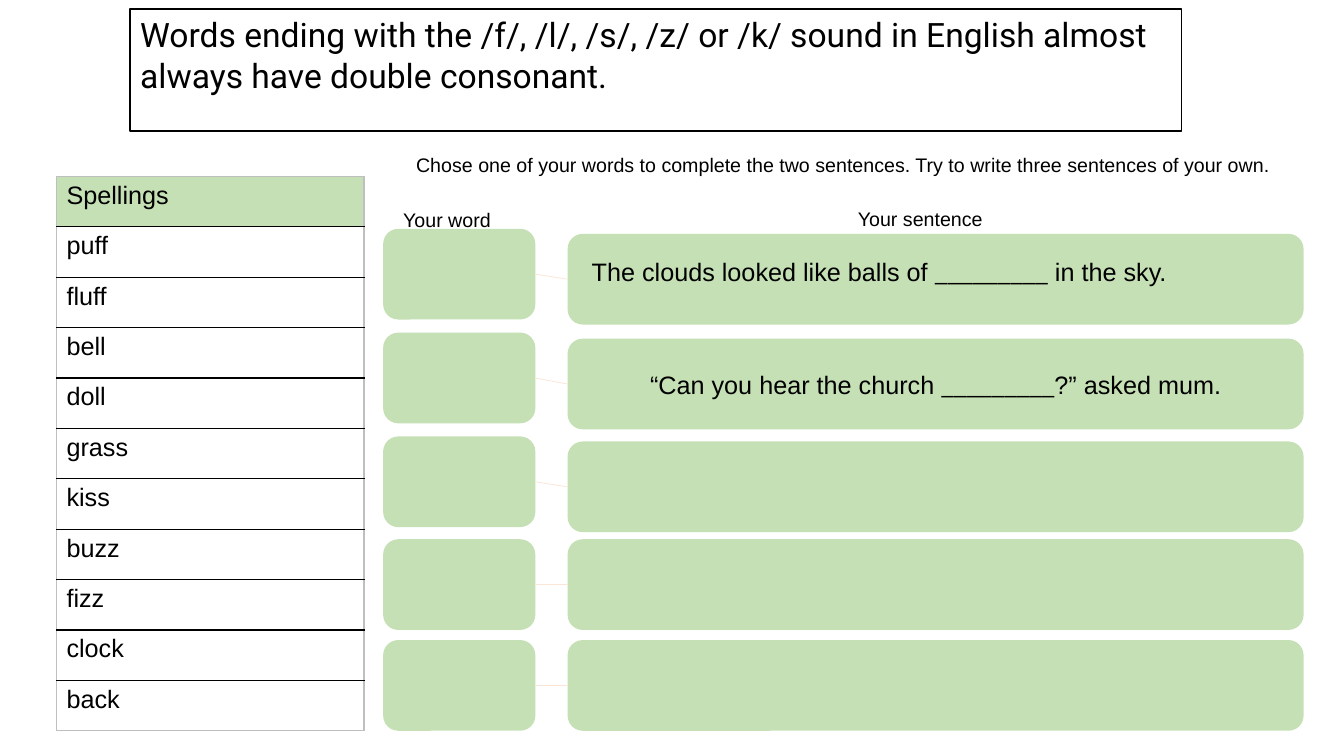
from lxml import etree
from pptx import Presentation
from pptx import util as u
from pptx.dml.color import RGBColor
from pptx.enum import shapes, text
from pptx.oxml.ns import qn

PX = 9144  # EMU per px, 100 px to the inch
GREEN, BLACK, WHITE, GREY, PEACH = "C5E0B4", "000000", "FFFFFF", "BFBFBF", "FBE5D6"

HEADING = ("Words ending with the /f/, /l/, /s/, /z/ or /k/ sound in English "
           "almost always have double consonant.")
TASK = ("Chose one of your words to complete the two sentences. "
        "Try to write three sentences of your own.")
SPELLINGS = ["Spellings", "puff", "fluff", "bell", "doll", "grass", "kiss",
             "buzz", "fizz", "clock", "back"]
GAP = "_________"
CLOUDS = ["The clouds looked like balls of ", GAP, " in the sky."]
CHURCH = ["“Can you hear the church ", GAP, "?” asked mum."]

# Tops of the word box and the sentence box in each row
ROW_TOPS = [(227, 232), (330, 336), (433, 438), (535, 535), (635, 635)]
BOX_HEIGHT, WORD_LEFT, WORD_WIDTH = 90, 380, 151
SENTENCE_LEFT, SENTENCE_WIDTH = 563, 730


def px(*lengths):
    return [u.Emu(length * PX) for length in lengths]


def colour(hex_code):
    return RGBColor.from_string(hex_code)


def style_run(run, size, font="Arial"):
    run.font.size = u.Pt(size)
    run.font.name = font
    run.font.color.rgb = colour(BLACK)


def fill_gap_sentence(frame, parts, align):
    """Write a sentence whose gap is set in Calibri."""
    frame.word_wrap = True
    paragraph = frame.paragraphs[0]
    paragraph.alignment = align
    for part in parts:
        run = paragraph.add_run()
        run.text = part
        style_run(run, 18, "Calibri" if part == GAP else "Arial")


def add_heading(slide):
    heading = slide.shapes.title
    heading.left, heading.top, heading.width, heading.height = px(129, 9, 1043, 121)
    heading.fill.solid()
    heading.fill.fore_color.rgb = colour(WHITE)
    heading.line.color.rgb = colour(BLACK)
    heading.line.width = u.Pt(1)
    frame = heading.text_frame
    frame.text = HEADING
    frame.auto_size = text.MSO_AUTO_SIZE.NONE
    frame.vertical_anchor = text.MSO_ANCHOR.TOP
    frame.paragraphs[0].alignment = text.PP_ALIGN.LEFT
    style_run(frame.paragraphs[0].runs[0], 24, "Roboto")


def add_label(slide, words, place, align=text.PP_ALIGN.LEFT):
    frame = slide.shapes.add_textbox(*px(*place)).text_frame
    frame.word_wrap = True
    frame.text = words
    frame.paragraphs[0].alignment = align
    style_run(frame.paragraphs[0].runs[0], 14)


def add_green_box(slide, left, top, width):
    box = slide.shapes.add_shape(shapes.MSO_SHAPE.ROUNDED_RECTANGLE,
                                 *px(left, top, width, BOX_HEIGHT))
    box.shadow.inherit = False
    box.fill.solid()
    box.fill.fore_color.rgb = colour(GREEN)
    box.line.fill.background()
    return box


def join(slide, word_box, sentence_box):
    link = slide.shapes.add_connector(shapes.MSO_CONNECTOR.STRAIGHT, 0, 0, 0, 0)
    link.begin_connect(word_box, 3)
    link.end_connect(sentence_box, 1)
    link.line.color.rgb = colour(PEACH)
    link.line.width = u.Pt(0.5)
    etree.SubElement(link._element.spPr, qn("a:effectLst"))


def add_border(cell, side, hex_code):
    border = etree.SubElement(cell._tc.get_or_add_tcPr(), qn(f"a:ln{side}"), w="12700")
    fill = etree.SubElement(border, qn("a:solidFill"))
    etree.SubElement(fill, qn("a:srgbClr"), val=hex_code)


def add_spellings(slide):
    count = len(SPELLINGS)
    table = slide.shapes.add_table(count, 1, *px(56, 175, 305, 50 * count)).table
    table.first_row = table.horz_banding = False
    for row, word in enumerate(SPELLINGS):
        cell = table.cell(row, 0)
        cell.text = word
        style_run(cell.text_frame.paragraphs[0].runs[0], 18)
        add_border(cell, "L", GREY)
        add_border(cell, "R", GREY)
        add_border(cell, "T", GREY if row == 0 else BLACK)
        add_border(cell, "B", GREY if row == count - 1 else BLACK)
        if row == 0:
            cell.fill.solid()
            cell.fill.fore_color.rgb = colour(GREEN)
        else:
            cell.fill.background()


def main():
    deck = Presentation()
    deck.slide_width, deck.slide_height = px(1333, 750)
    slide = deck.slides.add_slide(deck.slide_layouts[5])

    add_heading(slide)
    add_spellings(slide)
    add_label(slide, TASK, (380, 147, 913, 57), text.PP_ALIGN.CENTER)
    add_label(slide, "Your word", (390, 201, 129, 34))
    add_label(slide, "Your sentence", (841, 200, 169, 34))

    sentence_boxes = []
    for word_top, sentence_top in ROW_TOPS:
        word_box = add_green_box(slide, WORD_LEFT, word_top, WORD_WIDTH)
        sentence_box = add_green_box(slide, SENTENCE_LEFT, sentence_top, SENTENCE_WIDTH)
        join(slide, word_box, sentence_box)
        sentence_boxes.append(sentence_box)

    clouds = slide.shapes.add_textbox(*px(577, 249, 692, 71))
    fill_gap_sentence(clouds.text_frame, CLOUDS, text.PP_ALIGN.LEFT)
    church = sentence_boxes[1].text_frame
    church.vertical_anchor = text.MSO_ANCHOR.MIDDLE
    fill_gap_sentence(church, CHURCH, text.PP_ALIGN.CENTER)

    deck.save("out.pptx")


if __name__ == "__main__":
    main()
